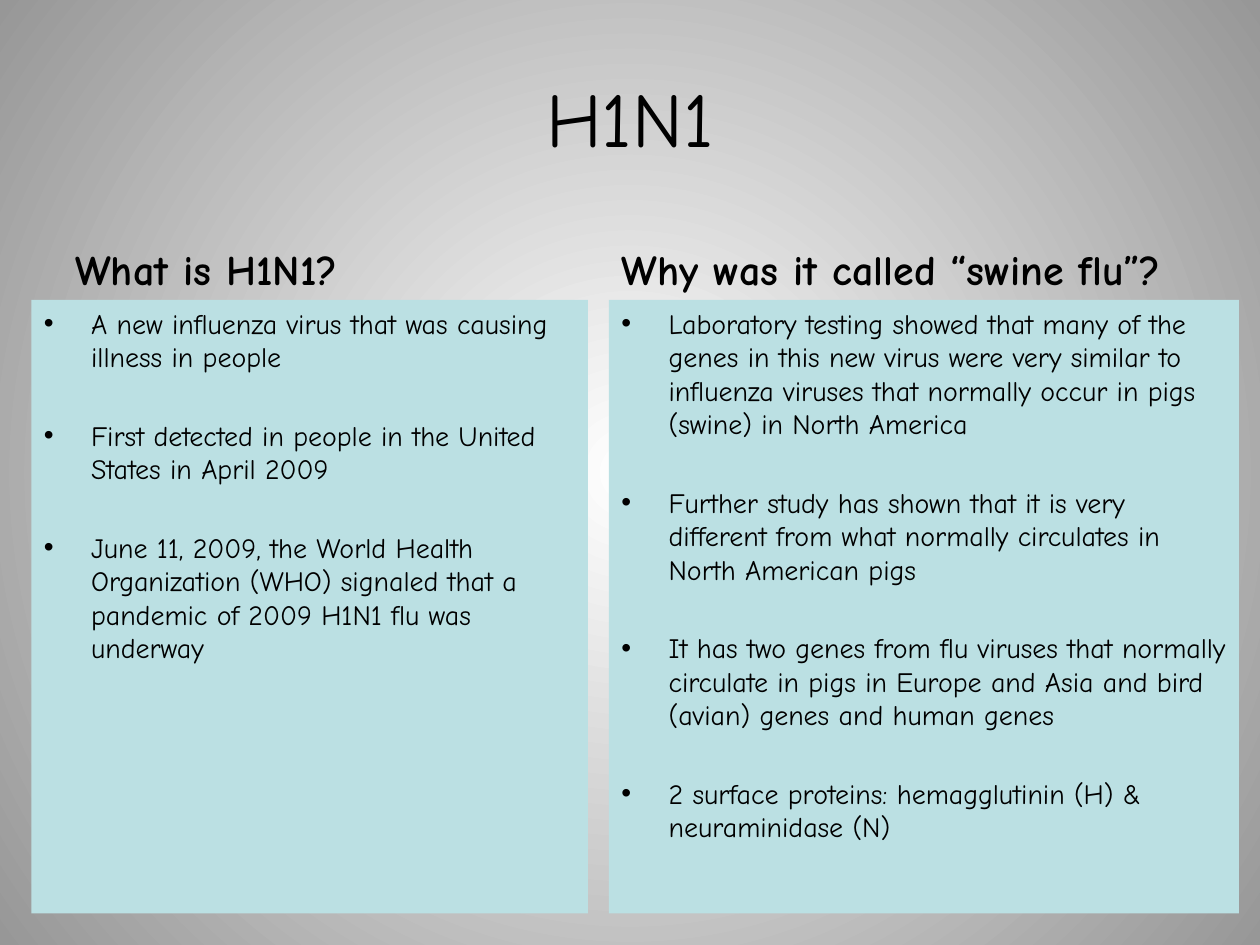
from lxml.etree import SubElement
from pptx import Presentation
from pptx.dml.color import RGBColor
from pptx.enum.shapes import MSO_SHAPE
from pptx.enum.text import MSO_ANCHOR, PP_ALIGN
from pptx.oxml.ns import qn
from pptx.util import Pt

BLACK = RGBColor(0x00, 0x00, 0x00)
WHITE = RGBColor(0xFF, 0xFF, 0xFF)
GRAY = RGBColor(0x97, 0x97, 0x97)
PALE_BLUE = RGBColor(0xBB, 0xE0, 0xE3)
FONT = "Comic Neue"
BULLET_INDENT = Pt(27)

# Per column: heading left and width, panel left and width, heading, bullets
COLUMNS = [
    (36, 318, 18, 318, "What is H1N1?", [
        "A new influenza virus that was causing illness in people",
        "First detected in people in the United States in April 2009",
        "June 11, 2009, the World Health Organization (WHO) signaled that a "
        "pandemic of 2009 H1N1 flu was underway",
    ]),
    (348, 384, 348, 360, "Why was it called “swine flu”?", [
        "Laboratory testing showed that many of the genes in this new virus were "
        "very similar to influenza viruses that normally occur in pigs (swine) "
        "in North America",
        "Further study has shown that it is very different from what normally "
        "circulates in North American pigs",
        "It has two genes from flu viruses that normally circulate in pigs in "
        "Europe and Asia and bird (avian) genes and human genes",
        "2 surface proteins: hemagglutinin (H) & neuraminidase (N)",
    ]),
]


def format_text(paragraph, size, bold=False):
    for run in paragraph.runs:
        run.font.name = FONT
        run.font.size = Pt(size)
        run.font.bold = bold
        run.font.color.rgb = BLACK


def add_line(left, top, width, height, text, size, anchor, bold=False):
    text_frame = slide.shapes.add_textbox(
        Pt(left), Pt(top), Pt(width), Pt(height)).text_frame
    text_frame.word_wrap = True
    text_frame.vertical_anchor = anchor
    text_frame.text = text
    format_text(text_frame.paragraphs[0], size, bold)
    return text_frame.paragraphs[0]


presentation = Presentation()
presentation.slide_width, presentation.slide_height = Pt(720), Pt(540)
slide = presentation.slides.add_slide(presentation.slide_layouts[6])

# Background: circular gradient from the centre
fill = slide.background.fill
fill.gradient()
for stop, position, color in zip(fill.gradient_stops, (0, 1), (WHITE, GRAY)):
    stop.position = position
    stop.color.rgb = color
gradient = next(slide._element.iter(qn("a:gradFill")))
gradient.remove(gradient.find(qn("a:lin")))
circle = SubElement(gradient, qn("a:path"), path="circle")
SubElement(circle, qn("a:fillToRect"), l="50000", t="50000", r="50000", b="50000")

# Title
title = add_line(0, 21.6, 720, 90, "H1N1", 44, MSO_ANCHOR.MIDDLE)
title.alignment = PP_ALIGN.CENTER

# Columns: a heading above a panel of bullets
for heading_left, heading_width, left, width, heading, bullets in COLUMNS:
    add_line(heading_left, 121, heading_width, 50.4, heading, 24,
             MSO_ANCHOR.BOTTOM, bold=True)

    panel = slide.shapes.add_shape(
        MSO_SHAPE.RECTANGLE, Pt(left), Pt(171.4), Pt(width), Pt(350.6))
    panel.shadow.inherit = False
    panel.fill.solid()
    panel.fill.fore_color.rgb = PALE_BLUE
    panel.line.fill.background()

    text_frame = panel.text_frame
    text_frame.word_wrap = True
    text_frame.vertical_anchor = MSO_ANCHOR.TOP
    text_frame.text = "\n".join(bullets)
    for index, paragraph in enumerate(text_frame.paragraphs):
        paragraph.alignment = PP_ALIGN.LEFT
        paragraph.space_before = Pt(25.6 if index else 0)
        format_text(paragraph, 16)
        properties = paragraph._p.get_or_add_pPr()
        properties.set("marL", str(BULLET_INDENT))
        properties.set("indent", str(-BULLET_INDENT))
        SubElement(properties, qn("a:buFont"), typeface="Arial")
        SubElement(properties, qn("a:buChar"), char="•")

presentation.save("out.pptx")
